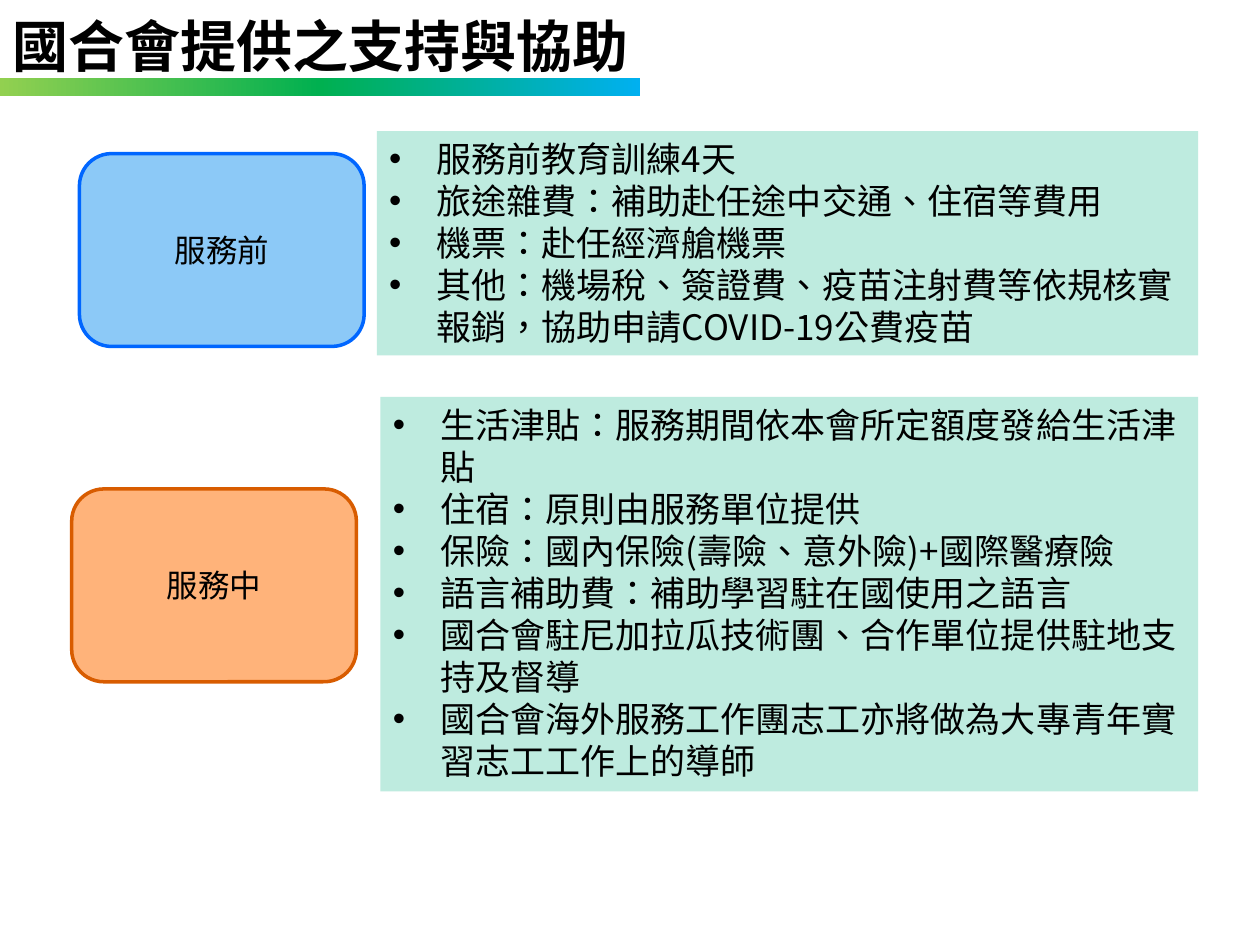
import copy

import pptx
import pptx.dml.color
import pptx.enum.dml
import pptx.enum.lang
import pptx.enum.shapes
import pptx.enum.text
import pptx.oxml
import pptx.oxml.ns
import pptx.util

Pt = pptx.util.Pt
RGB = pptx.dml.color.RGBColor.from_string
SHAPE = pptx.enum.shapes.MSO_SHAPE
ALIGN = pptx.enum.text.PP_ALIGN
ANCHOR = pptx.enum.text.MSO_ANCHOR
qn = pptx.oxml.ns.qn

THEME = {
    "text": "000000",
    "panel": "BEEBDF",
    "bar": ("92D050", "00B050", "00B0F0"),
    "cjk": "Noto Sans CJK SC",
    "latin": "Cambria",
    "title": 32,
    "body": 20,
    "label": 18,
    "leading": 1.2,
    "indent": 27,
}


def write(p, text, size, name, bold=False):
    """Add one run to p, with the same typeface for East Asian text as THEME['cjk']."""
    p.line_spacing = Pt(size * THEME["leading"])
    r = p.add_run()
    r.text = text
    formats = {"size": Pt(size), "name": name, "bold": bold,
               "language_id": pptx.enum.lang.MSO_LANGUAGE_ID.TRADITIONAL_CHINESE}
    for key, value in formats.items():
        setattr(r.font, key, value)
    r.font.color.rgb = RGB(THEME["text"])
    ea = pptx.oxml.parse_xml(
        f'<a:ea {pptx.oxml.ns.nsdecls("a")} typeface="{THEME["cjk"]}"/>')
    r.font._element.find(qn("a:latin")).addnext(ea)


def add_box(shapes, kind, box, fill):
    sp = shapes.add_shape(kind, *map(Pt, box))
    sp.shadow.inherit = False
    sp.fill.solid()
    sp.fill.fore_color.rgb = RGB(fill)
    sp.line.fill.background()
    return sp


prs = pptx.Presentation()
prs.slide_width, prs.slide_height = Pt(720), Pt(540)
s = prs.slides.add_slide(prs.slide_layouts[5])

# Title and gradient bar
title = s.shapes.title
title.left, title.top, title.width, title.height = map(Pt, (0, 2.9, 393.8, 54))
tf = title.text_frame
for key, value in {"word_wrap": True, "vertical_anchor": ANCHOR.TOP,
                   "auto_size": pptx.enum.text.MSO_AUTO_SIZE.NONE}.items():
    setattr(tf, key, value)
p = tf.paragraphs[0]
p.alignment = ALIGN.LEFT
write(p, "國合會提供之支持與協助", THEME["title"], THEME["cjk"], bold=True)

bar = add_box(s.shapes, SHAPE.RECTANGLE, (0, 44.6, 365.8, 10.1), THEME["panel"])
bar.fill.gradient()
bar.fill.gradient_angle = 0
stops = bar._element.spPr.find(qn("a:gradFill")).find(qn("a:gsLst"))
stops.insert(1, copy.deepcopy(stops[0]))
for i, (stop, color) in enumerate(zip(bar.fill.gradient_stops, THEME["bar"])):
    stop.color.rgb = RGB(color)
    stop.position = i / 2

# Stages of service: a label and its list of support
stages = [
    {"label": "服務前", "fill": "8CC9F7", "line": "0066FF",
     "label_box": (45.4, 87.8, 162.7, 110.2),
     "panel_box": (215.3, 74.9, 469.4, 128.2),
     "items": ["服務前教育訓練4天",
               "旅途雜費：補助赴任途中交通、住宿等費用",
               "機票：赴任經濟艙機票",
               "其他：機場稅、簽證費、疫苗注射費等依規核實報銷，協助申請COVID-19公費疫苗"]},
    {"label": "服務中", "fill": "FFB37A", "line": "D85C00",
     "label_box": (41, 279.4, 162.7, 110.2),
     "panel_box": (217.4, 226.8, 467.3, 225.4),
     "items": ["生活津貼：服務期間依本會所定額度發給生活津貼",
               "住宿：原則由服務單位提供",
               "保險：國內保險(壽險、意外險)+國際醫療險",
               "語言補助費：補助學習駐在國使用之語言",
               "國合會駐尼加拉瓜技術團、合作單位提供駐地支持及督導",
               "國合會海外服務工作團志工亦將做為大專青年實習志工工作上的導師"]},
]
for stage in stages:
    group = s.shapes.add_group_shape()

    panel = add_box(group.shapes, SHAPE.RECTANGLE, stage["panel_box"], THEME["panel"])
    tf = panel.text_frame
    tf.word_wrap = True
    tf.vertical_anchor = ANCHOR.TOP
    for i, item in enumerate(stage["items"]):
        p = tf.add_paragraph() if i else tf.paragraphs[0]
        p.alignment = ALIGN.LEFT
        write(p, item, THEME["body"], THEME["cjk"])
        pPr = p._p.get_or_add_pPr()
        pPr.set("marL", str(Pt(THEME["indent"])))
        pPr.set("indent", str(-Pt(THEME["indent"])))
        for tag, attrs in (("buFont", 'typeface="Arial"'), ("buChar", 'char="•"')):
            pPr.append(pptx.oxml.parse_xml(
                f'<a:{tag} {pptx.oxml.ns.nsdecls("a")} {attrs}/>'))

    label = add_box(group.shapes, SHAPE.ROUNDED_RECTANGLE, stage["label_box"], stage["fill"])
    label.line.color.rgb = RGB(stage["line"])
    label.line.width = Pt(2)
    tf = label.text_frame
    tf.word_wrap = True
    tf.vertical_anchor = ANCHOR.MIDDLE
    p = tf.paragraphs[0]
    p.alignment = ALIGN.CENTER
    write(p, stage["label"], THEME["label"], THEME["latin"])

prs.save("out.pptx")
